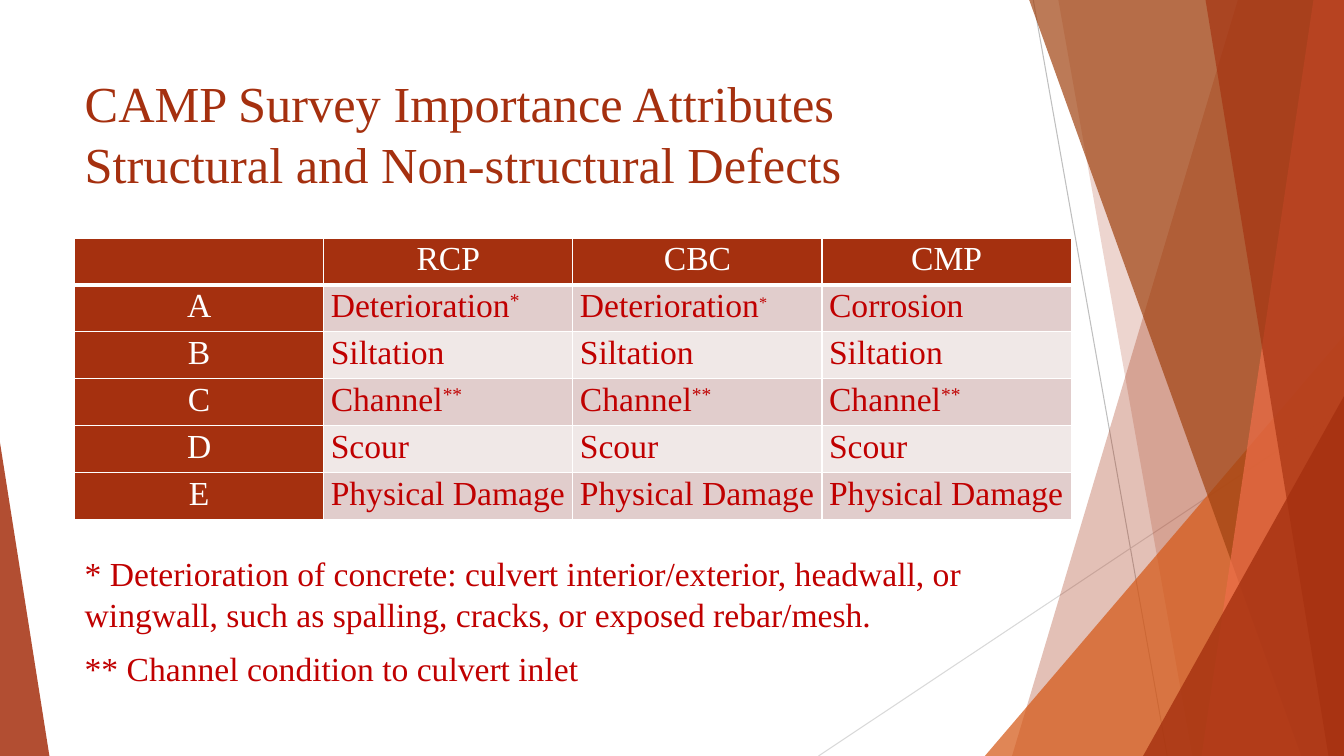
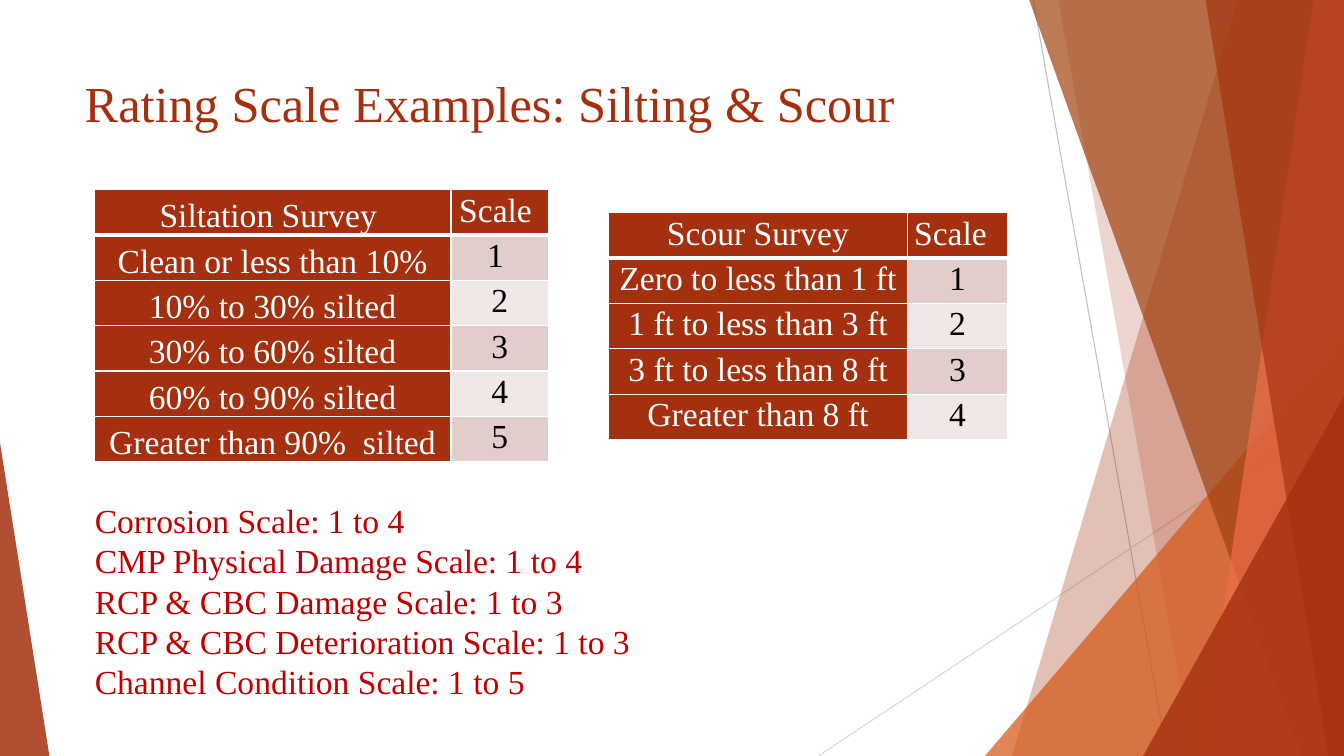
import lxml.etree
import pptx
import pptx.dml.color
import pptx.enum.shapes
import pptx.enum.text
import pptx.oxml.ns
import pptx.text.text
import pptx.util

Pt = pptx.util.Pt
Inches = pptx.util.Inches
RGB = pptx.dml.color.RGBColor.from_string
qn = pptx.oxml.ns.qn
ALIGN = pptx.enum.text.PP_ALIGN
ANCHOR = pptx.enum.text.MSO_ANCHOR

W, H = Inches(13.333), Inches(7.5)
FONT = "Times New Roman"
COLORS = {
    "brick": "A5300F", "orange": "D55816", "brown": "A04210", "coral": "EE6E4A",
    "red": "C00000", "black": "000000", "white": "FFFFFF",
    "band_dark": "E1CDCC", "band_light": "F0E8E7",
    "gray": "BFBFBF", "pale_gray": "D9D9D9",
}
TITLE_FONT = {"name": FONT, "size": Pt(36), "color": "brick"}
TEXT_FONT = {"name": FONT, "size": Pt(24), "color": "red"}
TITLE_AT = (5.55, 8.93, 70.5, 19.2)

# Decoration, in percent of the slide: from x, y to x, y, colour
LINES = [
    (76.88, 0, 86.85, 100, "gray"),
    (100, 53.73, 60.9, 100, "pale_gray"),
]
# Panels reach the right edge: left at top, left at bottom, colour, opacity
# Triangles stand on the bottom edge: left, top, width, apex, colour, opacity
BANDS = [
    (92.1, 75.3, "brick", 30),
    (78.75, 88.73, "brick", 20),
    (73.28, 44.4, 26.72, 1, "orange", 72),
    (76.58, 96.83, "brown", 70),
    (97.73, 89.4, "coral", 70),
    (89.7, 98.85, "brick", 65),
    (85.05, 52.4, 14.95, 1, "brick", 80),
    (0, 58.53, 3.68, 0, "brick", 85),
]


def across(share):
    return round(W * share / 100)


def down(share):
    return round(H * share / 100)


def box(left, top, width, height):
    return across(left), down(top), across(width), down(height)


def set_font(font, fmt):
    for name, value in fmt.items():
        if name == "color":
            font.color.rgb = RGB(COLORS[value])
        else:
            setattr(font, name, value)


# Shared look
def style_master(master):
    for kind, fmt in (("title", TITLE_FONT), ("body", TEXT_FONT)):
        lvl = master.element.xpath(f"p:txStyles/p:{kind}Style/a:lvl1pPr")[0]
        for name, value in {"algn": "l", "marL": "0", "indent": "0"}.items():
            lvl.set(name, value)
        bullet = lvl.find(qn("a:buChar"))
        if bullet is not None:
            lvl.replace(bullet, lxml.etree.Element(qn("a:buNone")))
        set_font(pptx.text.text.Font(lvl.find(qn("a:defRPr"))), fmt)


def add_line(shapes, x1, y1, x2, y2, color):
    line = shapes.add_connector(pptx.enum.shapes.MSO_CONNECTOR.STRAIGHT,
                                across(x1), down(y1), across(x2), down(y2))
    line.line.color.rgb = RGB(COLORS[color])
    line.line.width = Pt(0.75)
    lxml.etree.SubElement(line.element.spPr, qn("a:effectLst"))


def add_panel(shapes, top_x, bottom_x):
    builder = shapes.build_freeform(across(top_x), 0, scale=1.0)
    builder.add_line_segments([(W, 0), (W, H), (across(bottom_x), H)], close=True)
    return builder.convert_to_shape()


def add_triangle(shapes, left, top, width, apex):
    sp = shapes.add_shape(pptx.enum.shapes.MSO_SHAPE.ISOSCELES_TRIANGLE,
                          *box(left, top, width, 100 - top))
    sp.adjustments[0] = apex
    return sp


def decorate(layout, s):
    group = s.shapes.add_group_shape()
    for line in LINES:
        add_line(group.shapes, *line)
    for *place, color, opacity in BANDS:
        add = add_panel if len(place) == 2 else add_triangle
        sp = add(group.shapes, *place)
        sp.shadow.inherit = False
        sp.line.fill.background()
        sp.fill.solid()
        sp.fill.fore_color.rgb = RGB(COLORS[color])
        clr = sp.element.spPr.xpath("a:solidFill/a:srgbClr")[0]
        lxml.etree.SubElement(clr, qn("a:alpha"), val=str(opacity * 1000))
    for number, props in enumerate(group.element.xpath(".//p:cNvPr"), 100):
        props.set("id", str(number))
    # The layout carries the group, behind its placeholders
    layout.shapes.element.insert(2, group.element)


# Text
def fill_placeholder(sp, at, paragraphs, gap=0):
    sp.left, sp.top, sp.width, sp.height = box(*at)
    tf = sp.text_frame
    for name, value in {"word_wrap": True, "vertical_anchor": ANCHOR.TOP,
                        "auto_size": pptx.enum.text.MSO_AUTO_SIZE.NONE}.items():
        setattr(tf, name, value)
    tf.text = "\n".join(paragraphs)
    for i, p in enumerate(tf.paragraphs):
        p.space_before = Pt(gap if i else 0)


# Tables
def set_borders(cell, row):
    tcPr = cell._tc.get_or_add_tcPr()
    heavy = {0: "B", 1: "T"}.get(row)
    for side in "LRTB":
        width = Pt(3 if side == heavy else 1)
        ln = lxml.etree.SubElement(tcPr, qn(f"a:ln{side}"), w=str(width))
        fill = lxml.etree.SubElement(ln, qn("a:solidFill"))
        lxml.etree.SubElement(fill, qn("a:srgbClr"), val=COLORS["white"])


def write_cell(cell, text, align, color):
    p = cell.text_frame.paragraphs[0]
    p.alignment, p.line_spacing = align, 1.07
    word, star, rest = text.partition("*")
    for part in filter(None, (word, star + rest)):
        r = p.add_run()
        r.text = part
        set_font(r.font, {**TEXT_FONT, "color": color})
        if part.startswith("*"):
            r._r.get_or_add_rPr().set("baseline", "30000")


def add_table(s, left, top, widths, row_height, rows, color, align=ALIGN.CENTER,
              label_anchor=ANCHOR.TOP):
    at = box(left, top, sum(widths), row_height * len(rows))
    table = s.shapes.add_table(len(rows), len(widths), *at).table
    table.first_row = table.horz_banding = False
    for column, width in zip(table.columns, widths):
        column.width = across(width)
    for i, row in enumerate(rows):
        table.rows[i].height = down(row_height)
        for j, text in enumerate(row):
            cell = table.cell(i, j)
            label = i == 0 or j == 0
            for name, value in {
                "margin_left": Inches(0.07), "margin_right": Inches(0.07),
                "margin_top": 0, "margin_bottom": 0,
                "vertical_anchor": ANCHOR.TOP if j else label_anchor,
            }.items():
                setattr(cell, name, value)
            set_borders(cell, i)
            cell.fill.solid()
            fill = "brick" if label else "band_dark" if i % 2 else "band_light"
            cell.fill.fore_color.rgb = RGB(COLORS[fill])
            write_cell(cell, text, ALIGN.CENTER if label else align,
                       "white" if label else color)
    return table


# Slides
def fill_attributes(s):
    title, body = s.placeholders
    fill_placeholder(title, TITLE_AT, [
        "CAMP Survey Importance Attributes\vStructural and Non-structural Defects"])
    fill_placeholder(body, (5.55, 72.5, 70.5, 23), [
        "* Deterioration of concrete: culvert interior/exterior, headwall, or "
        "wingwall, such as spalling, cracks, or exposed rebar/mesh.",
        "** Channel condition to culvert inlet",
    ], gap=10)
    table = add_table(s, 5.55, 31.47, [18.54] * 4, 6.22, [
        ["", "RCP", "CBC", "CMP"],
        ["A", "Deterioration*", "Deterioration*", "Corrosion"],
        ["B"] + ["Siltation"] * 3,
        ["C"] + ["Channel**"] * 3,
        ["D"] + ["Scour"] * 3,
        ["E"] + ["Physical Damage"] * 3,
    ], "red", align=ALIGN.LEFT)
    small_star = table.cell(1, 2).text_frame.paragraphs[0].runs[1]
    small_star.font.size = Pt(20)


def fill_scales(s):
    title, body = s.placeholders
    fill_placeholder(title, TITLE_AT, ["Rating Scale Examples: Silting & Scour"])
    fill_placeholder(body, (6.3, 65.47, 69.08, 28.27), [
        "Corrosion Scale: 1 to 4",
        "CMP Physical Damage Scale: 1 to 4",
        "RCP & CBC Damage Scale: 1 to 3",
        "RCP & CBC Deterioration Scale: 1 to 3",
        "Channel Condition Scale: 1 to 5",
    ])
    add_table(s, 7, 25.07, [26.55, 7.28], 6, [
        ["Siltation Survey ", "Scale "],
        ["Clean or less than 10%", "1 "],
        ["10% to 30% silted", "2"],
        ["30% to 60% silted", "3"],
        ["60% to 90% silted", "4"],
        ["Greater than 90%  silted", "5"],
    ], "black", label_anchor=ANCHOR.BOTTOM)
    scour = add_table(s, 45.3, 28.13, [22.2, 7.5], 6, [
        ["Scour Survey", "Scale"],
        ["Zero to less than 1 ft", "1"],
        ["1 ft to less than 3 ft", "2"],
        ["3 ft to less than 8 ft", "3"],
        ["Greater than 8 ft", "4"],
    ], "black")
    scour.cell(0, 1).text_frame.paragraphs[0].alignment = ALIGN.LEFT


def main():
    prs = pptx.Presentation()
    prs.slide_width, prs.slide_height = W, H
    style_master(prs.slide_master)
    layout = prs.slide_layouts.get_by_name("Title and Content")
    attributes, scales = (prs.slides.add_slide(layout) for _ in range(2))
    decorate(layout, attributes)
    fill_attributes(attributes)
    fill_scales(scales)
    prs.save("out.pptx")


if __name__ == "__main__":
    main()
